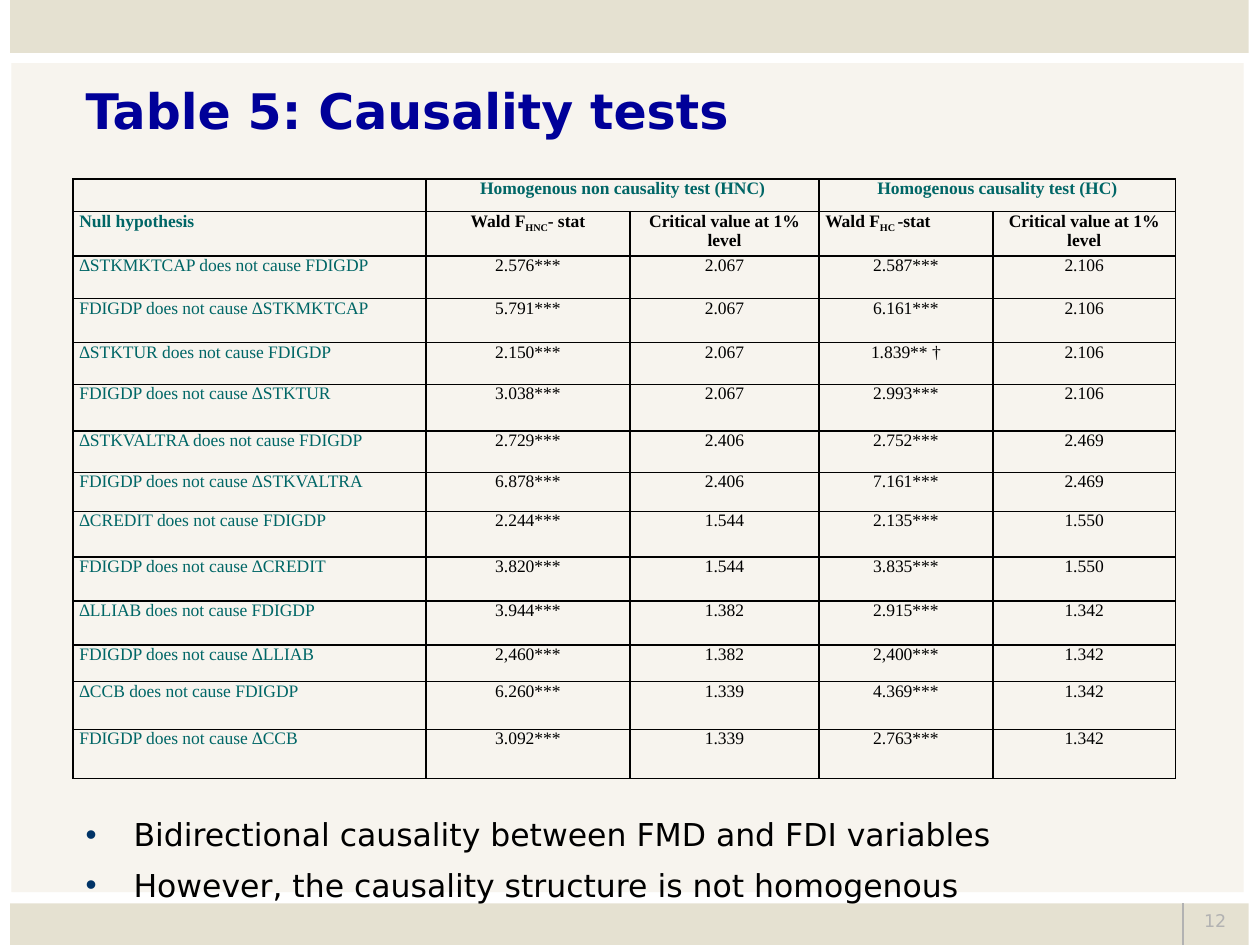
"""Build the slide that tabulates the causality tests."""
import pptx
import pptx.dml.color
import pptx.enum.shapes
import pptx.enum.text
import pptx.oxml
import pptx.oxml.ns
import pptx.util

RGBColor = pptx.dml.color.RGBColor
ALIGN = pptx.enum.text.PP_ALIGN
ANCHOR = pptx.enum.text.MSO_ANCHOR

SAND = RGBColor(0xE5, 0xE1, 0xD1)
CREAM = RGBColor(0xF7, 0xF4, 0xEE)
GREY = RGBColor(0xB2, 0xB2, 0xB2)
BLUE = RGBColor(0x00, 0x00, 0x99)
NAVY = RGBColor(0x00, 0x33, 0x66)
TEAL = RGBColor(0x00, 0x66, 0x66)
BLACK = RGBColor(0x00, 0x00, 0x00)

COLUMN_WIDTHS = [28, 16.2, 15, 13.8, 14.5]
ROW_HEIGHTS = [2.6, 3.5, 3.4, 3.5, 3.3, 3.7, 3.3, 3.1, 3.6, 3.5, 3.5, 2.9, 3.8, 3.9]
HEADER = [
    ["", "Homogenous non causality test (HNC)", "", "Homogenous causality test (HC)", ""],
    ["Null hypothesis", "Wald F|HNC|- stat", "Critical value at 1% level",
     "Wald F|HC |-stat", "Critical value at 1% level"],
]
TESTS = [
    ("∆STKMKTCAP", "2.067", "2.106", ("2.576***", "2.587***"), ("5.791***", "6.161***")),
    ("∆STKTUR", "2.067", "2.106", ("2.150***", "1.839** †"), ("3.038***", "2.993***")),
    ("∆STKVALTRA", "2.406", "2.469", ("2.729***", "2.752***"), ("6.878***", "7.161***")),
    ("∆CREDIT", "1.544", "1.550", ("2.244***", "2.135***"), ("3.820***", "3.835***")),
    ("∆LLIAB", "1.382", "1.342", ("3.944***", "2.915***"), ("2,460***", "2,400***")),
    ("∆CCB", "1.339", "1.342", ("6.260***", "4.369***"), ("3.092***", "2.763***")),
]


class SlideBuilder:
    """Hold the style and the current slide, measured on a grid of 100 columns by 75 rows."""

    heading_font = "DejaVu Sans"
    table_font = "Times New Roman"

    def __init__(self, presentation):
        self.unit = presentation.slide_width / 100
        self.slide = presentation.slides.add_slide(presentation.slide_layouts[1])

    def grid(self, *counts):
        return [pptx.util.Emu(round(count * self.unit)) for count in counts]

    def format(self, paragraph, name, size, color, bold=False, align=ALIGN.LEFT):
        paragraph.alignment = align
        font = paragraph.font
        font.name, font.size, font.bold = name, pptx.util.Pt(size), bold
        font.color.rgb = color

    def panel(self, box, color):
        kind = pptx.enum.shapes.MSO_SHAPE.RECTANGLE
        shape = self.slide.shapes.add_shape(kind, *self.grid(*box))
        shape.shadow.inherit = False
        shape.fill.solid()
        shape.fill.fore_color.rgb = color
        shape.line.fill.background()

    def rule(self, ends, color, width):
        kind = pptx.enum.shapes.MSO_CONNECTOR.STRAIGHT
        connector = self.slide.shapes.add_connector(kind, *self.grid(*ends))
        connector.line.color.rgb = color
        connector.line.width = pptx.util.Pt(width)
        properties = connector.element.spPr
        properties.append(pptx.oxml.parse_xml(
            f"<a:effectLst {pptx.oxml.ns.nsdecls('a')}/>"))

    def place(self, placeholder, box):
        placeholder.left, placeholder.top, placeholder.width, placeholder.height = self.grid(*box)
        placeholder.element.getparent().append(placeholder.element)
        placeholder.text_frame.auto_size = pptx.enum.text.MSO_AUTO_SIZE.NONE
        return placeholder.text_frame

    def title(self, text, box):
        frame = self.place(self.slide.shapes.title, box)
        frame.text = text
        frame.vertical_anchor = ANCHOR.MIDDLE
        self.format(frame.paragraphs[0], self.heading_font, 28, BLUE, bold=True)

    def bullets(self, lines, box):
        frame = self.place(self.slide.placeholders[1], box)
        frame.text = "\n".join(lines)
        frame.vertical_anchor = ANCHOR.TOP
        indent, = self.grid(3.8)
        namespace = pptx.oxml.ns.nsdecls("a")
        for paragraph in frame.paragraphs:
            self.format(paragraph, self.heading_font, 18, BLACK)
            paragraph.space_before = pptx.util.Pt(7.2)
            properties = paragraph._p.get_or_add_pPr()
            properties.set("marL", str(indent))
            properties.set("indent", str(-indent))
            marks = (f'<a:buClr {namespace}><a:srgbClr val="{NAVY}"/></a:buClr>',
                     f'<a:buChar {namespace} char="•"/>')
            for position, mark in enumerate(marks, start=1):
                properties.insert(position, pptx.oxml.parse_xml(mark))

    def label(self, text, box):
        frame = self.slide.shapes.add_textbox(*self.grid(*box)).text_frame
        frame.word_wrap = True
        frame.text = text
        self.format(frame.paragraphs[0], self.heading_font, 10, GREY, align=ALIGN.RIGHT)

    def borders(self, cell):
        properties = cell._tc.get_or_add_tcPr()
        for position, side in enumerate("LRTB"):
            properties.insert(position, pptx.oxml.parse_xml(
                f'<a:ln{side} {pptx.oxml.ns.nsdecls("a")} w="12700">'
                f'<a:solidFill><a:srgbClr val="{BLACK}"/></a:solidFill></a:ln{side}>'))

    def cell(self, cell, text, color, bold, align):
        cell.fill.background()
        self.borders(cell)
        cell.margin_left, cell.margin_right, cell.margin_top, cell.margin_bottom = (
            self.grid(0.5, 0.5, 0, 0))
        paragraph = cell.text_frame.paragraphs[0]
        for position, piece in enumerate(text.split("|") if text else []):
            run = paragraph.add_run()
            run.text = piece
            if position % 2:
                run._r.get_or_add_rPr().set("baseline", "-25000")
        self.format(paragraph, self.table_font, 10, color, bold, align)

    def table(self, rows, left, top):
        box = (left, top, sum(COLUMN_WIDTHS), sum(ROW_HEIGHTS))
        table = self.slide.shapes.add_table(
            len(rows), len(COLUMN_WIDTHS), *self.grid(*box)).table
        table.first_row = table.horz_banding = False
        for column, width in zip(table.columns, self.grid(*COLUMN_WIDTHS)):
            column.width = width
        for row, height in zip(table.rows, self.grid(*ROW_HEIGHTS)):
            row.height = height
        for row_index, row in enumerate(rows):
            for column_index, text in enumerate(row):
                color = TEAL if row_index == 0 or column_index == 0 else BLACK
                left_aligned = column_index == 0 or (row_index, column_index) == (1, 3)
                self.cell(table.cell(row_index, column_index), text, color,
                          row_index < len(HEADER), ALIGN.LEFT if left_aligned else ALIGN.CENTER)
        for start in (1, 3):
            table.cell(0, start).merge(table.cell(0, start + 1))


def test_rows():
    for variable, critical_hnc, critical_hc, forward, backward in TESTS:
        pairs = ((variable, "FDIGDP", forward), ("FDIGDP", variable, backward))
        for cause, effect, (hnc, hc) in pairs:
            yield [f"{cause} does not cause {effect}", hnc, critical_hnc, hc, critical_hc]


def main():
    presentation = pptx.Presentation()
    presentation.slide_width = pptx.util.Inches(10)
    presentation.slide_height = pptx.util.Inches(7.5)
    builder = SlideBuilder(presentation)
    builder.panel((0.8, 71.7, 98.3, 3.3), SAND)
    builder.panel((0.9, 5, 97.8, 65.8), CREAM)
    builder.rule((93.9, 71.7, 93.9, 75), GREY, 0.75)
    builder.panel((0.8, 0, 98.3, 4.2), SAND)
    builder.title("Table 5: Causality tests", (5.8, 3.3, 89.2, 10.8))
    builder.label("12", (93.9, 71.7, 4.4, 3.3))
    builder.bullets(["Bidirectional causality between FMD and FDI variables",
                     "However, the causality structure is not homogenous"],
                    (5.8, 64.2, 85.8, 5.8))
    builder.table(HEADER + list(test_rows()), 5.8, 14.2)
    presentation.save("out.pptx")


if __name__ == "__main__":
    main()
